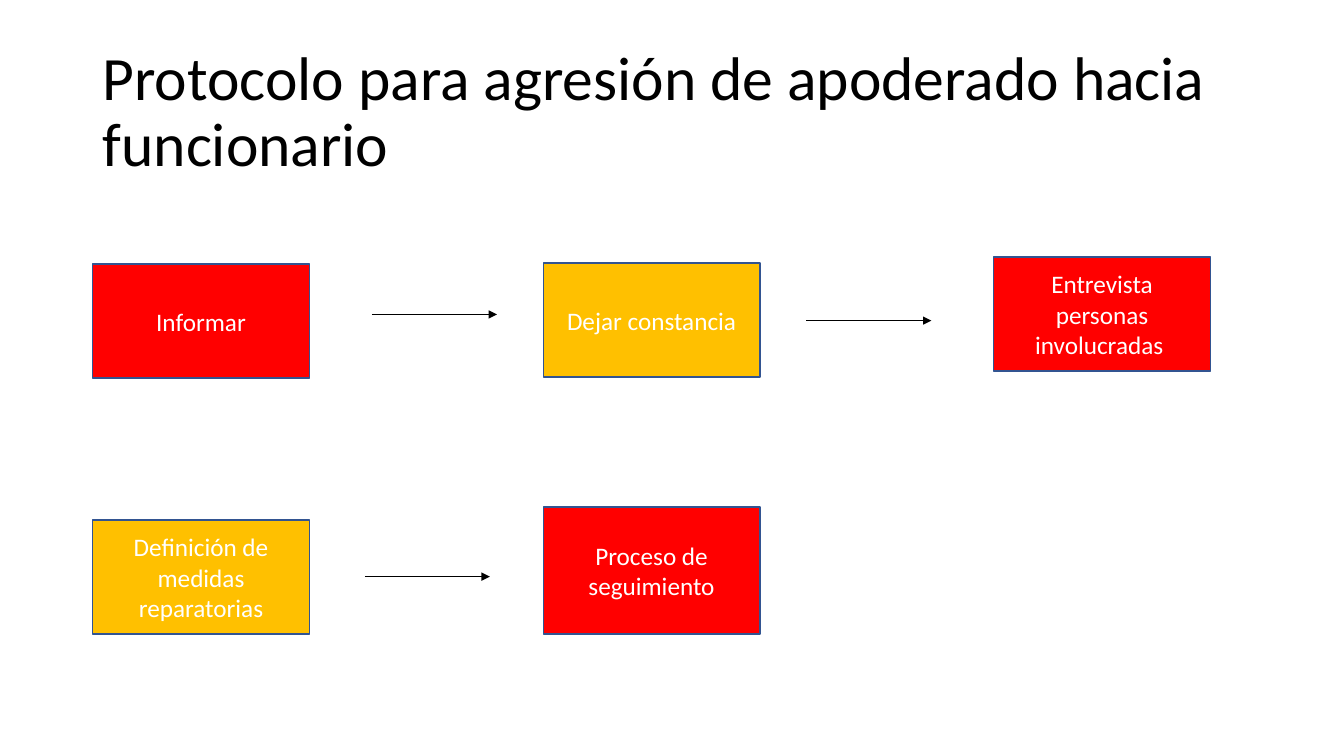
import pptx
import pptx.dml.color
import pptx.enum.shapes
import pptx.enum.text
import pptx.oxml
import pptx.oxml.ns
import pptx.util

Pt = pptx.util.Pt
COLORS = {
    "red": "FF0000",
    "amber": "FFC000",
    "outline": "325491",
    "black": "000000",
    "white": "FFFFFF",
}
STEP_WIDTH = 154.8
STEP_PITCH = 321.8
ARROW_LENGTH = 89.3

FIRST_ROW = {
    "steps": [
        ("Informar", "red", 5, 81.4),
        ("Dejar constancia", "amber", 4.3, 81.4),
        ("Entrevista personas involucradas ", "red", 0, 81.4),
    ],
    "arrows": [(199.5, 41), (509.8, 45.4)],
}
SECOND_ROW = {
    "steps": [
        ("Definición de medidas reparatorias", "amber", 9.3, 81.4),
        ("Proceso de seguimiento", "red", 0, 90.7),
    ],
    "arrows": [(194.4, 49.7)],
}


def color(name):
    return pptx.dml.color.RGBColor.from_string(COLORS[name])


def write_text(shape, text, size, color_name, alignment):
    frame = shape.text_frame
    frame.word_wrap = True
    frame.vertical_anchor = pptx.enum.text.MSO_ANCHOR.MIDDLE
    frame.text = text
    para = frame.paragraphs[0]
    para.alignment = alignment
    span = para.runs[0]
    span.font.name = "Calibri"
    span.font.size = Pt(size)
    span.font.color.rgb = color(color_name)
    return para


def add_title(page, left, top, width, height):
    box = page.shapes.add_textbox(Pt(left), Pt(top), Pt(width), Pt(height))
    para = write_text(
        box,
        "Protocolo para agresión de apoderado hacia funcionario",
        44,
        "black",
        pptx.enum.text.PP_ALIGN.LEFT,
    )
    para.line_spacing = 0.9


def add_step(page, left, top, height, text, fill):
    box = page.shapes.add_shape(
        pptx.enum.shapes.MSO_SHAPE.RECTANGLE,
        Pt(left), Pt(top), Pt(STEP_WIDTH), Pt(height),
    )
    box.shadow.inherit = False
    box.fill.solid()
    box.fill.fore_color.rgb = color(fill)
    box.line.color.rgb = color("outline")
    box.line.width = Pt(1)
    write_text(box, text, 18, "white", pptx.enum.text.PP_ALIGN.CENTER)


def add_arrow(page, left, top):
    arrow = page.shapes.add_connector(
        pptx.enum.shapes.MSO_CONNECTOR.STRAIGHT,
        Pt(left), Pt(top), Pt(left + ARROW_LENGTH), Pt(top),
    )
    arrow.line.color.rgb = color("black")
    arrow.line.width = Pt(0.5)
    namespace = pptx.oxml.ns.nsdecls("a")
    head = pptx.oxml.parse_xml(f'<a:tailEnd {namespace} type="triangle"/>')
    arrow.line._get_or_add_ln().append(head)
    effects = pptx.oxml.parse_xml(f"<a:effectLst {namespace}/>")
    arrow._element.spPr.append(effects)


def add_flow_row(page, left, top, row):
    for column, (text, fill, drop, height) in enumerate(row["steps"]):
        add_step(page, left + column * STEP_PITCH, top + drop, height, text, fill)
    for across, down in row["arrows"]:
        add_arrow(page, left + across, top + down)


def main():
    deck = pptx.Presentation()
    deck.slide_width = Pt(960)
    deck.slide_height = Pt(540)
    page = deck.slides.add_slide(deck.slide_layouts[6])
    add_title(page, 66.2, 28.8, 828, 104.4)
    add_flow_row(page, 66.2, 183.6, FIRST_ROW)
    add_flow_row(page, 66.2, 362.2, SECOND_ROW)
    deck.save("out.pptx")


if __name__ == "__main__":
    main()
